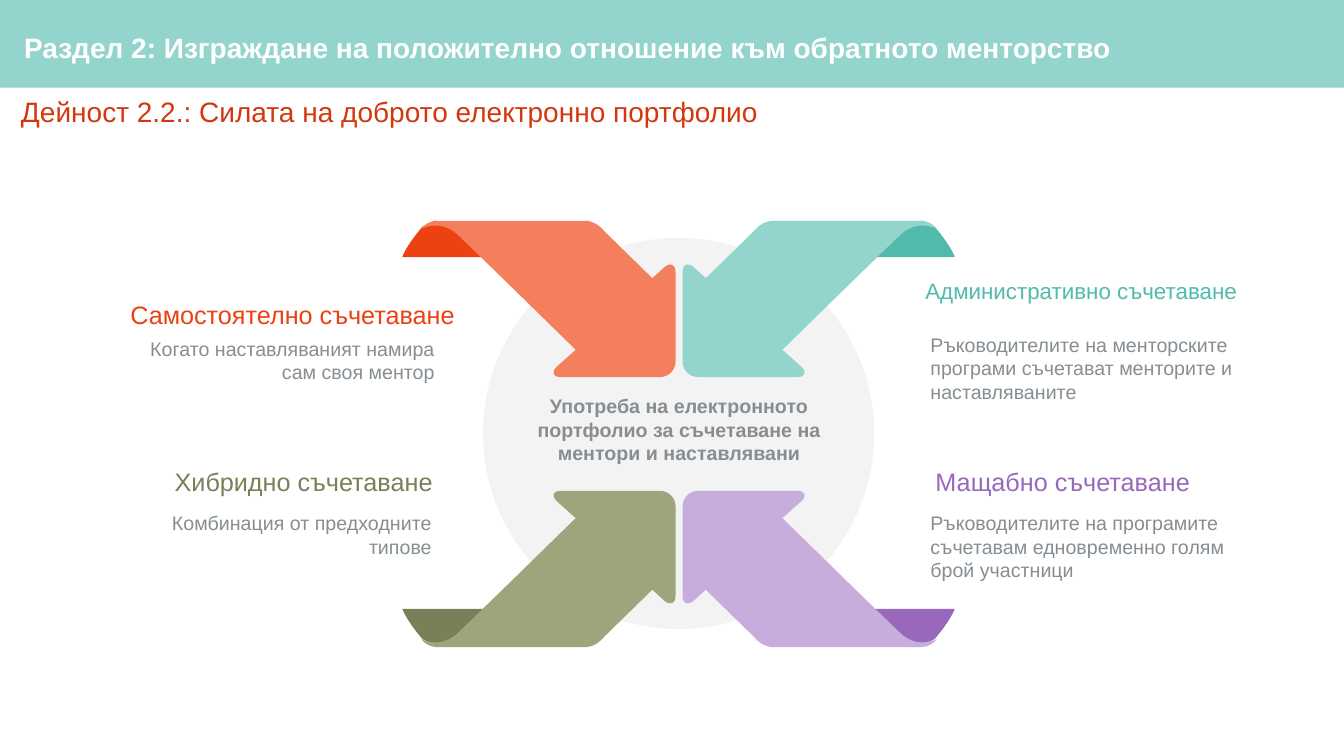
import pptx
import pptx.dml.color
import pptx.enum.shapes
import pptx.enum.text
import pptx.oxml
import pptx.oxml.ns
import pptx.util
import lxml.etree

Inches = pptx.util.Inches
RGBColor = pptx.dml.color.RGBColor
Align = pptx.enum.text.PP_ALIGN
Preset = pptx.enum.shapes.MSO_SHAPE
qn = pptx.oxml.ns.qn

FONT = "Arial"
WHITE = RGBColor(0xFF, 0xFF, 0xFF)
GREY = RGBColor(0x86, 0x8E, 0x93)
DISC_GREY = RGBColor(0x7F, 0x7F, 0x7F)
RED = RGBColor(0xD3, 0x37, 0x0D)
ORANGE = RGBColor(0xF4, 0x7F, 0x5D)
DARK_ORANGE = RGBColor(0xEC, 0x41, 0x10)
TEAL = RGBColor(0x93, 0xD4, 0xCC)
DARK_TEAL = RGBColor(0x52, 0xBA, 0xAD)
OLIVE = RGBColor(0x9D, 0xA5, 0x7C)
DARK_OLIVE = RGBColor(0x78, 0x80, 0x58)
LILAC = RGBColor(0xC7, 0xAD, 0xDB)
DARK_LILAC = RGBColor(0x98, 0x68, 0xBD)

# Upper left outlines in inches, segment by segment: one point is the end
# of a straight line, three are a curve's two control points and its end.
FOLD = [[(3.99, 2.55)], [(4.79, 2.55)], [(4.77, 2.32)], [(4.58, 2.22)],
        [(4.31, 2.19)], [(4.19, 2.25)],
        [(4.19, 2.25), (4.04, 2.42), (3.99, 2.55)]]
ARROW = [[(6.59, 2.65)], [(6.47, 2.76)], [(5.99, 2.29)],
         [(5.99, 2.29), (5.91, 2.18), (5.78, 2.19)], [(4.36, 2.19)],
         [(4.36, 2.19), (4.24, 2.18), (4.18, 2.27)],
         [(4.18, 2.27), (4.36, 2.17), (4.53, 2.32)],
         [(4.70, 2.48), (5.71, 3.47), (5.71, 3.47)], [(5.52, 3.64)],
         [(5.47, 3.69), (5.48, 3.74), (5.56, 3.74)], [(6.55, 3.74)],
         [(6.63, 3.74), (6.70, 3.67), (6.70, 3.59)], [(6.70, 2.70)],
         [(6.70, 2.62), (6.65, 2.60), (6.59, 2.65)]]
# Left plus right, and top plus bottom, of mirrored points
FOLD_SUMS = (13.46, 8.59)
ARROW_SUMS = (13.47, 8.61)

# Arrow colour, fold colour, on the right, at the bottom
ARROWS = [(ORANGE, DARK_ORANGE, False, False), (TEAL, DARK_TEAL, True, False),
          (OLIVE, DARK_OLIVE, False, True), (LILAC, DARK_LILAC, True, True)]

# Heading, its place, size, colour; description, its place; alignment
MATCHINGS = [
    ("Административно съчетаване", (9.08, 2.7, 3.7, 0.37), 16, DARK_TEAL,
     "Ръководителите на менторските програми съчетават менторите и наставляваните",
     (9.13, 3.25, 3.51, 0.81), Align.LEFT),
    ("Самостоятелно съчетаване", (0.98, 2.92, 3.63, 0.4), 18, DARK_ORANGE,
     "Когато наставляваният намира сам своя ментор",
     (1.17, 3.29, 3.24, 0.57), Align.RIGHT),
    ("Мащабно съчетаване", (9.18, 4.58, 3.51, 0.4), 18, DARK_LILAC,
     "Ръководителите на програмите съчетавам едновременно голям брой участници",
     (9.13, 5.02, 3.24, 0.81), Align.LEFT),
    ("Хибридно съчетаване", (1.07, 4.58, 3.32, 0.4), 18, DARK_OLIVE,
     "Комбинация от предходните типове",
     (1.14, 5.02, 3.24, 0.57), Align.RIGHT),
]


def paint(shape, color, opacity=100):
    shape.shadow.inherit = False
    shape.fill.solid()
    shape.fill.fore_color.rgb = color
    shape.line.fill.background()
    if opacity < 100:
        tone = shape.fill._xPr.find(".//" + qn("a:srgbClr"))
        lxml.etree.SubElement(tone, qn("a:alpha"), val=str(opacity * 1000))


def add_preset(slide, preset, place, color, opacity=100):
    shape = slide.shapes.add_shape(preset, *map(Inches, place))
    paint(shape, color, opacity)


def add_text(slide, text, place, *, size=14, color=GREY, bold=False,
             align=Align.LEFT, spacing=None):
    box = slide.shapes.add_textbox(*map(Inches, place))
    box.text_frame.word_wrap = True
    para = box.text_frame.paragraphs[0]
    para.alignment = align
    if spacing:
        para.line_spacing = spacing
    span = para.add_run()
    span.text = text
    span.font.name = FONT
    span.font.size = pptx.util.Pt(size)
    span.font.bold = bold
    span.font.color.rgb = color


def add_outline(slide, outline, sums, color, right, bottom):
    """Draw an outline, mirrored to its corner, with true curves."""
    segments = [[(Inches(sums[0] - x if right else x),
                  Inches(sums[1] - y if bottom else y)) for x, y in segment]
                for segment in outline]
    ends = [segment[-1] for segment in segments]
    builder = slide.shapes.build_freeform(*ends[0])
    builder.add_line_segments(ends[1:], close=True)
    shape = builder.convert_to_shape()
    paint(shape, color)
    lines = list(shape.element.iter(qn("a:lnTo")))
    for line, segment in zip(lines, segments[1:]):
        if len(segment) == 3:
            curve = pptx.oxml.parse_xml(
                f'<a:cubicBezTo {pptx.oxml.ns.nsdecls("a")}/>')
            for x, y in segment:
                lxml.etree.SubElement(curve, qn("a:pt"), x=str(x - shape.left),
                                      y=str(y - shape.top))
            line.getparent().replace(line, curve)


def main():
    deck = pptx.Presentation()
    deck.slide_width = Inches(13.33)
    deck.slide_height = Inches(7.5)
    page = deck.slides.add_slide(deck.slide_layouts[6])

    # Header band and central disc
    add_preset(page, Preset.RECTANGLE, (0, 0, 13.33, 0.87), TEAL)
    add_preset(page, Preset.OVAL, (4.79, 2.36, 3.88, 3.88), DISC_GREY, opacity=9)

    # Folded ribbon ends, then the arrows over them
    for _, fold_color, right, bottom in ARROWS:
        add_outline(page, FOLD, FOLD_SUMS, fold_color, right, bottom)
    for arrow_color, _, right, bottom in ARROWS:
        add_outline(page, ARROW, ARROW_SUMS, arrow_color, right, bottom)

    # Central statement and the four kinds of matching
    add_text(page, "Употреба на електронното портфолио за съчетаване на ментори и наставлявани",
             (5.04, 3.86, 3.39, 0.81), bold=True, align=Align.CENTER)
    for heading, heading_place, size, color, detail, detail_place, align in MATCHINGS:
        add_text(page, detail, detail_place, align=align)
        add_text(page, heading, heading_place, size=size, color=color, align=align)

    # Titles
    add_text(page, "Раздел 2: Изграждане на положително отношение към обратното менторство",
             (0.14, 0.29, 13.06, 0.78), size=20, color=WHITE, bold=True, spacing=0.9)
    add_text(page, "Дейност 2.2.: Силата на доброто електронно портфолио",
             (0.11, 0.93, 13.06, 0.6), size=20, color=RED, align=Align.JUSTIFY, spacing=0.9)

    deck.save("out.pptx")


if __name__ == "__main__":
    main()
